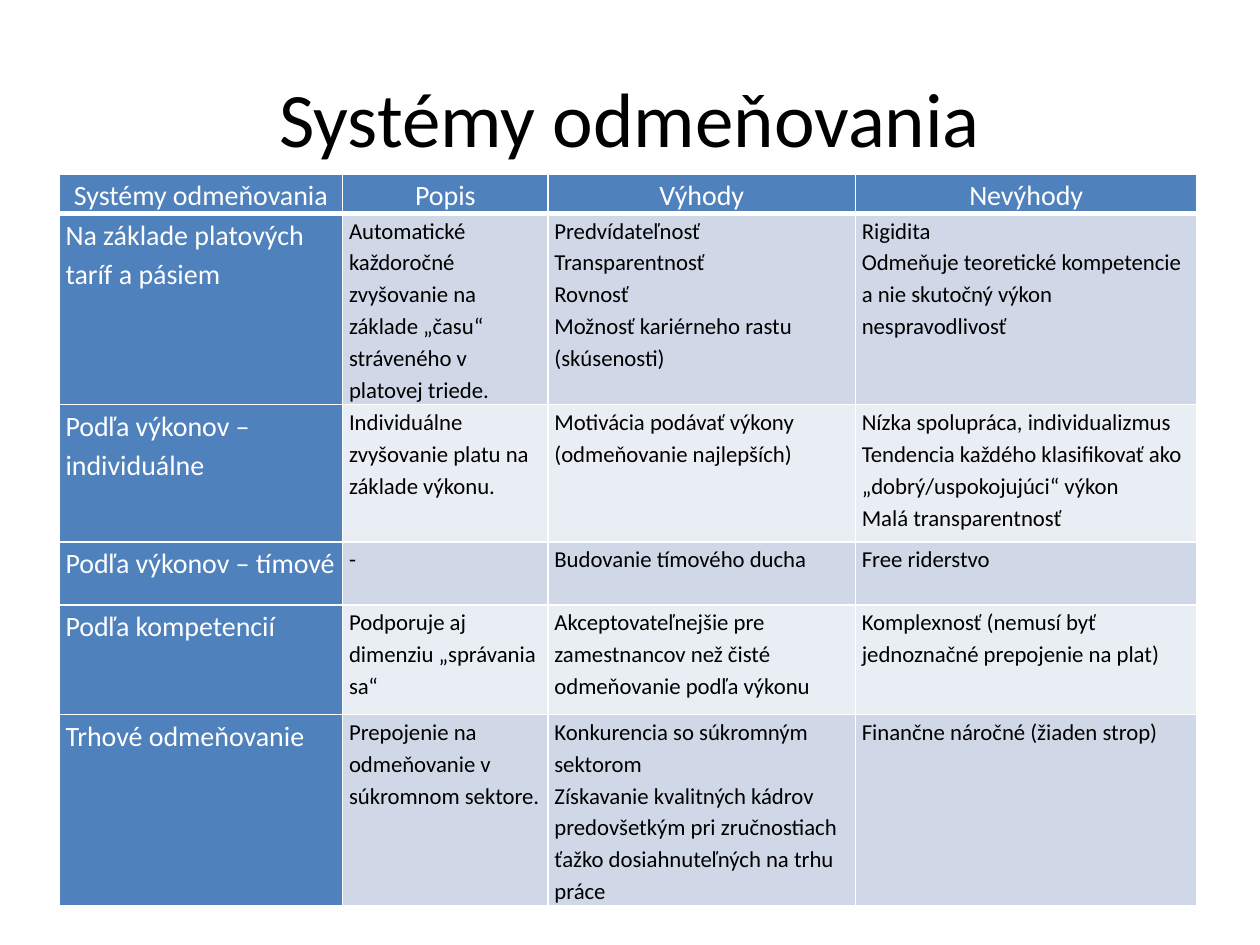
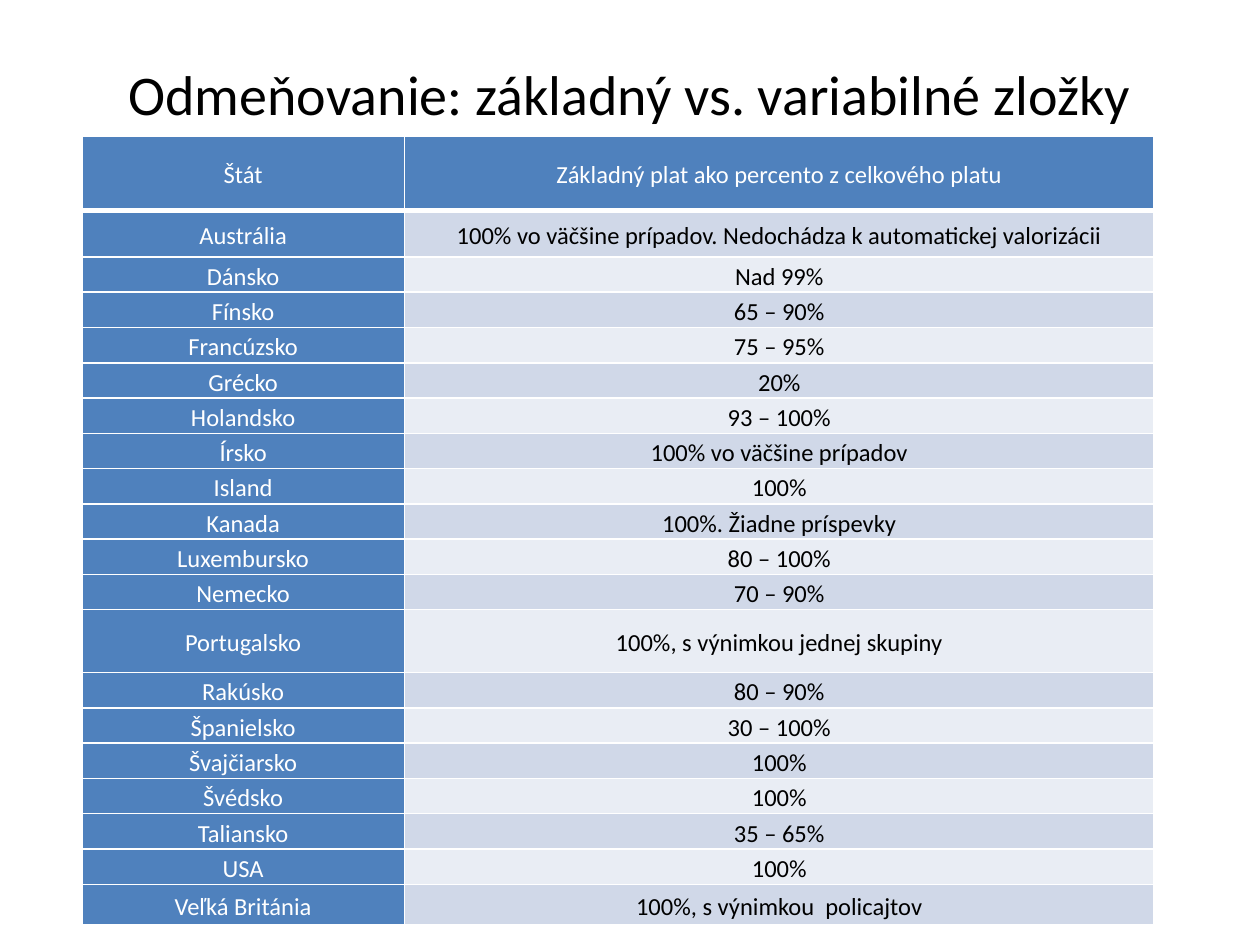
from lxml import etree
from pptx import Presentation
from pptx.dml.color import RGBColor
from pptx.enum import text
from pptx.oxml.ns import qn
from pptx.util import Inches, Pt

FONT = "Calibri"
BLUE = RGBColor(0x4F, 0x81, 0xBD)
BAND_DARK = RGBColor(0xD0, 0xD8, 0xE8)
BAND_LIGHT = RGBColor(0xE9, 0xED, 0xF4)
WHITE = RGBColor(0xFF, 0xFF, 0xFF)
BLACK = RGBColor(0x00, 0x00, 0x00)

REWARD_SYSTEMS = [
    ("Systémy odmeňovania", "Popis", "Výhody", "Nevýhody"),
    ("Na základe platových taríf a pásiem",
     "Automatické každoročné zvyšovanie na základe „času“ stráveného v platovej triede.",
     "Predvídateľnosť\nTransparentnosť\nRovnosť\nMožnosť kariérneho rastu (skúsenosti)",
     "Rigidita\nOdmeňuje teoretické kompetencie a nie skutočný výkon\nnespravodlivosť"),
    ("Podľa výkonov – individuálne",
     "Individuálne zvyšovanie platu na základe výkonu.",
     "Motivácia podávať výkony (odmeňovanie najlepších)",
     "Nízka spolupráca, individualizmus\n"
     "Tendencia každého klasifikovať ako „dobrý/uspokojujúci“ výkon\n"
     "Malá transparentnosť"),
    ("Podľa výkonov – tímové", "-", "Budovanie tímového ducha", "Free riderstvo"),
    ("Podľa kompetencií",
     "Podporuje aj dimenziu „správania sa“",
     "Akceptovateľnejšie pre zamestnancov než čisté odmeňovanie podľa výkonu",
     "Komplexnosť (nemusí byť jednoznačné prepojenie na plat)"),
    ("Trhové odmeňovanie",
     "Prepojenie na odmeňovanie v súkromnom sektore.",
     "Konkurencia so súkromným sektorom\n"
     "Získavanie kvalitných kádrov predovšetkým pri zručnostiach "
     "ťažko dosiahnuteľných na trhu práce",
     "Finančne náročné (žiaden strop)"),
]

BASE_PAY = [
    ("Štát", "Základný plat ako percento z celkového platu"),
    ("Austrália", "100% vo väčšine prípadov. Nedochádza k automatickej valorizácii"),
    ("Dánsko", "Nad 99%"),
    ("Fínsko", "65 – 90%"),
    ("Francúzsko", "75 – 95%"),
    ("Grécko", "20%"),
    ("Holandsko", "93 – 100%"),
    ("Írsko", "100% vo väčšine prípadov"),
    ("Island", "100%"),
    ("Kanada", "100%. Žiadne príspevky"),
    ("Luxembursko", "80 – 100%"),
    ("Nemecko", "70 – 90%"),
    ("Portugalsko", "100%, s výnimkou jednej skupiny"),
    ("Rakúsko", "80 – 90%"),
    ("Španielsko", "30 – 100%"),
    ("Švajčiarsko", "100%"),
    ("Švédsko", "100%"),
    ("Taliansko", "35 – 65%"),
    ("USA", "100%"),
    ("Veľká Británia", "100%, s výnimkou  policajtov"),
]

SLIDES = [
    dict(title="Systémy odmeňovania", title_size=44, title_height=1.25,
         rows=REWARD_SYSTEMS, left=0.47, top=1.38,
         widths=[2.25, 1.63, 2.44, 2.71],
         heights=[0.3, 1.52, 1.09, 0.5, 0.87, 1.52],
         label_size=16, body_size=13, margin=0.05, centred=False),
    dict(title="Odmeňovanie: základný vs. variabilné zložky", title_size=32,
         title_height=0.88, rows=BASE_PAY, left=0.65, top=1.08,
         widths=[2.56, 5.95],
         heights=[0.59, 0.37] + [0.28] * 10 + [0.5] + [0.28] * 6 + [0.32],
         label_size=14, body_size=14, margin=0.07, centred=True),
]


def add_title(page, content):
    box = page.shapes.title
    box.left, box.top = Inches(0.5), Inches(0.3)
    box.width, box.height = Inches(9), Inches(content["title_height"])
    frame = box.text_frame
    frame.text = content["title"]
    frame.vertical_anchor = text.MSO_ANCHOR.MIDDLE
    para = frame.paragraphs[0]
    para.alignment = text.PP_ALIGN.CENTER
    style_font(para.font, content["title_size"], BLACK)


def style_font(font, size, colour):
    font.name, font.size, font.bold = FONT, Pt(size), False
    font.color.rgb = colour


def add_borders(cell, bottom):
    properties = cell._tc.get_or_add_tcPr()
    for side, width in (("lnL", 1), ("lnR", 1), ("lnT", 1), ("lnB", bottom)):
        line = etree.SubElement(properties, qn(f"a:{side}"), w=str(Pt(width)))
        fill = etree.SubElement(line, qn("a:solidFill"))
        etree.SubElement(fill, qn("a:srgbClr"), val=str(WHITE))


def fill_cell(cell, words, row, column, content):
    header, label = row == 0, row == 0 or column == 0
    centred = header or content["centred"]
    add_borders(cell, 3 if header else 1)
    cell.fill.solid()
    cell.fill.fore_color.rgb = BLUE if label else (BAND_DARK if row % 2 else BAND_LIGHT)
    cell.margin_left = cell.margin_right = Inches(content["margin"])
    cell.margin_top = cell.margin_bottom = 0
    cell.vertical_anchor = text.MSO_ANCHOR.MIDDLE if content["centred"] else text.MSO_ANCHOR.TOP
    cell.text_frame.text = words
    for para in cell.text_frame.paragraphs:
        para.alignment = text.PP_ALIGN.CENTER if centred else text.PP_ALIGN.LEFT
        para.line_spacing = 1.15
        for span in para.runs:
            style_font(span.font, content["label_size" if label else "body_size"],
                       WHITE if label else BLACK)


def add_grid(page, content):
    rows, widths, heights = content["rows"], content["widths"], content["heights"]
    grid = page.shapes.add_table(
        len(rows), len(widths), Inches(content["left"]), Inches(content["top"]),
        Inches(sum(widths)), Inches(sum(heights))).table
    for column, width in zip(grid.columns, widths):
        column.width = Inches(width)
    for line, height in zip(grid.rows, heights):
        line.height = Inches(height)
    for row, entries in enumerate(rows):
        for column, words in enumerate(entries):
            fill_cell(grid.cell(row, column), words, row, column, content)


def main():
    deck = Presentation()
    deck.slide_width, deck.slide_height = Inches(10), Inches(7.5)
    for content in SLIDES:
        page = deck.slides.add_slide(deck.slide_layouts[5])
        add_title(page, content)
        add_grid(page, content)
    deck.save("out.pptx")


if __name__ == "__main__":
    main()
